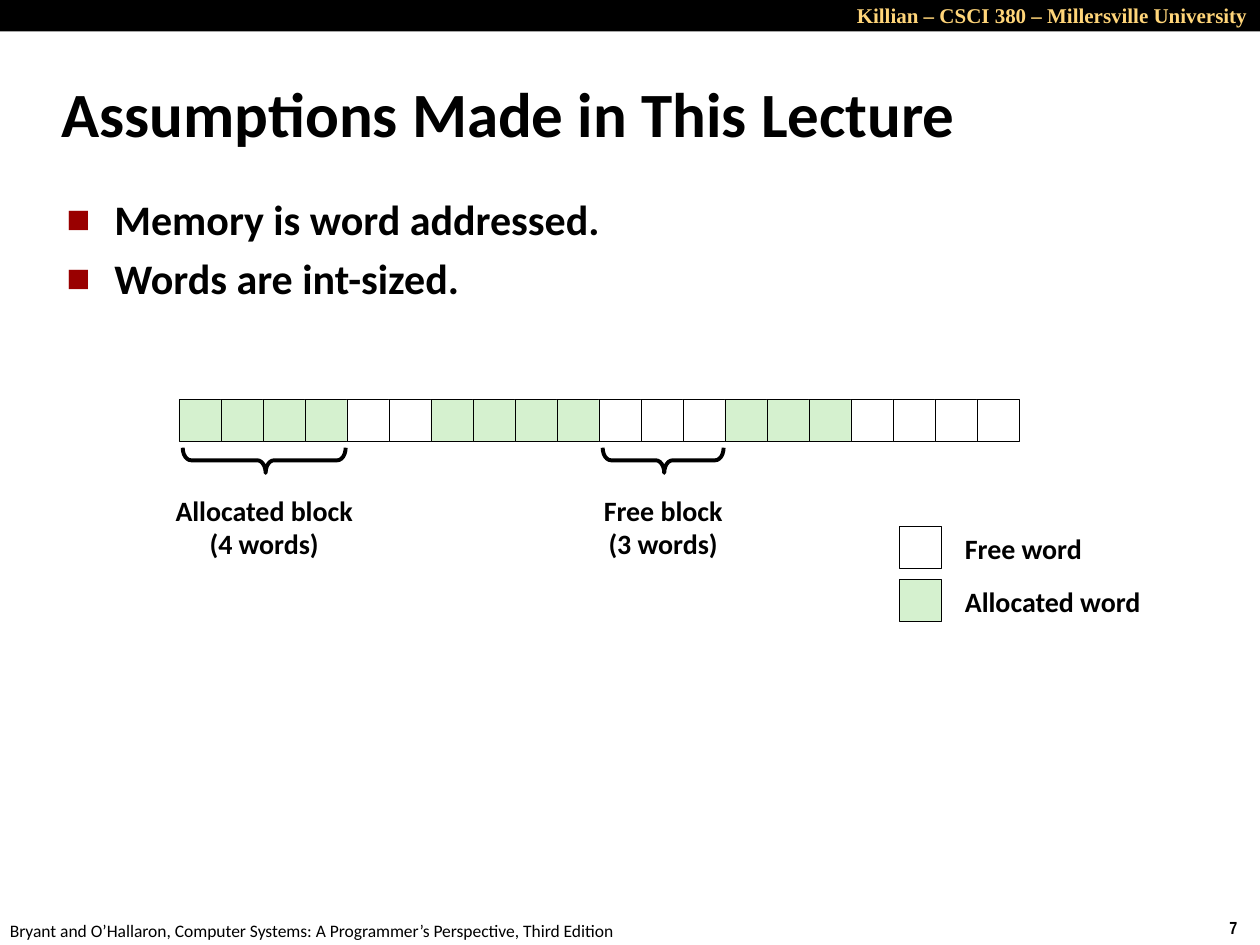
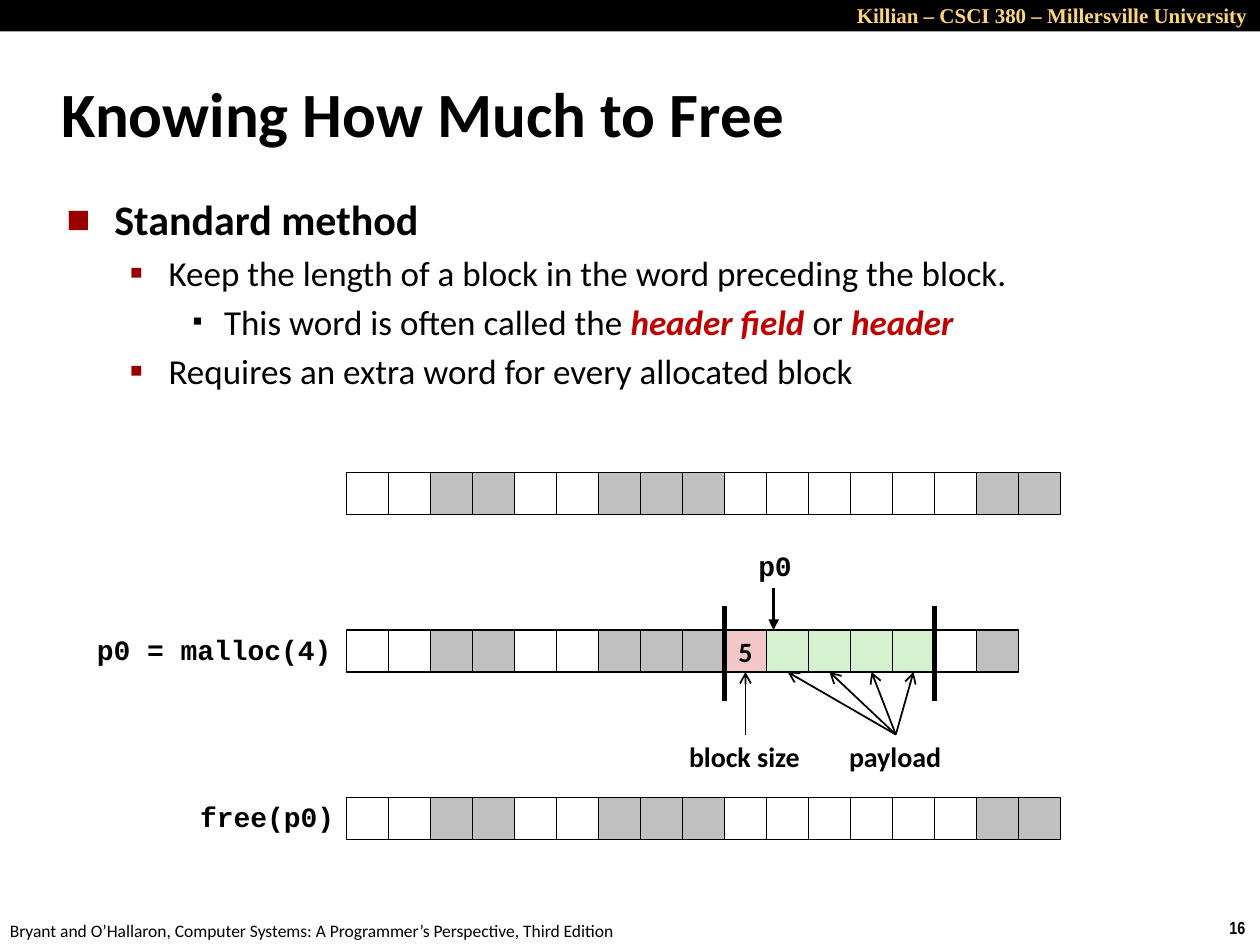
from pptx import Presentation
from pptx.dml.color import RGBColor
from pptx.enum.shapes import MSO_CONNECTOR, MSO_SHAPE
from pptx.enum.text import MSO_ANCHOR, MSO_AUTO_SIZE, PP_ALIGN
from pptx.oxml.ns import qn
from pptx.util import Inches, Pt
from lxml.etree import SubElement

BLACK = RGBColor(0x00, 0x00, 0x00)
WHITE = RGBColor(0xFF, 0xFF, 0xFF)
GOLD = RGBColor(0xFF, 0xD5, 0x79)
GREEN = RGBColor(0xD5, 0xF1, 0xCF)
GRAY = RGBColor(0xC0, 0xC0, 0xC0)
PINK = RGBColor(0xF1, 0xC7, 0xC7)
BULLET_RED = RGBColor(0x99, 0x00, 0x00)
TERM_RED = RGBColor(0xC0, 0x00, 0x00)

SANS, SERIF = "Calibri", "Times New Roman"
NARROW, CODE = "Arial Narrow", "Courier New"

WIDTH, HEIGHT = 10, 7.5
CELL = 1 / 3
WORD_FILLS = {".": WHITE, "A": GREEN, "#": GRAY, "H": PINK}

# Per level: indent, hanging, size, bold, bullet, bullet colour, bullet percent
LEVELS = [
    (0.38, 0.38, 24, True, "■", BULLET_RED, 60),
    (0.81, 0.31, 20, False, "▪", BULLET_RED, 110),
    (1.25, 0.25, 20, False, "▪", BLACK, 80),
]


def style(font, size, face=SANS, color=BLACK, bold=True, italic=False):
    font.size, font.name = Pt(size), face
    font.bold, font.italic = bold, italic
    font.color.rgb = color


def add_text(slide, text, box, size, face=SANS, color=BLACK, bold=True,
             align=PP_ALIGN.LEFT, wrap=False, spacing=None):
    frame = slide.shapes.add_textbox(*map(Inches, box)).text_frame
    frame.word_wrap = wrap
    frame.auto_size = MSO_AUTO_SIZE.NONE if wrap else MSO_AUTO_SIZE.SHAPE_TO_FIT_TEXT
    frame.text = text
    for paragraph in frame.paragraphs:
        paragraph.alignment = align
        paragraph.line_spacing = spacing
        for run in paragraph.runs:
            style(run.font, size, face, color, bold)
    return frame


def add_label(slide, text, box, face=SANS, align=PP_ALIGN.LEFT):
    spacing = 0.94 if face == CODE else 0.98
    add_text(slide, text, box, 16, face, align=align, spacing=spacing)


def set_indent(paragraph, left, hanging):
    properties = paragraph._p.get_or_add_pPr()
    properties.set("marL", str(Inches(left)))
    properties.set("indent", str(-Inches(hanging)))
    return properties


def add_frame(slide, title, number):
    """Draw the band, title and footer that every slide has."""
    band = slide.shapes.add_shape(MSO_SHAPE.RECTANGLE, 0, 0, Inches(WIDTH), Inches(HEIGHT / 30))
    band.shadow.inherit = False
    band.fill.solid()
    band.fill.fore_color.rgb = BLACK
    band.line.fill.background()
    add_text(slide, "Killian – CSCI 380 – Millersville University",
             (6.08, -0.03, 3.92, 0.3), 12, SERIF, GOLD, align=PP_ALIGN.RIGHT, wrap=True)
    add_text(slide, number, (9.66, 7.23, 0.34, 0.27), 10, NARROW)
    add_text(slide, "Bryant and O’Hallaron, Computer Systems: "
             "A Programmer’s Perspective, Third Edition",
             (-0.02, 7.25, 5.08, 0.27), 10, bold=False)
    heading = add_text(slide, title, (0.39, 0.48, 8.3, 0.83), 36, wrap=True)
    heading.vertical_anchor = MSO_ANCHOR.MIDDLE
    set_indent(heading.paragraphs[0], 0.13, 0.13)


def add_bullets(slide, items):
    """Write (level, parts) items; every second part is an emphasised term."""
    body = slide.shapes.add_textbox(*map(Inches, (0.43, 1.49, 8.64, 5.44))).text_frame
    body.word_wrap = True
    for index, (level, parts) in enumerate(items):
        paragraph = body.add_paragraph() if index else body.paragraphs[0]
        indent, hanging, size, bold, mark, mark_color, percent = LEVELS[level]
        paragraph.level = level
        paragraph.space_before = Pt(size / 5)
        properties = set_indent(paragraph, indent, hanging)
        color = SubElement(properties, qn("a:buClr"))
        SubElement(color, qn("a:srgbClr"), val=str(mark_color))
        SubElement(properties, qn("a:buSzPct"), val=str(percent * 1000))
        SubElement(properties, qn("a:buFont"), typeface=SANS)
        SubElement(properties, qn("a:buChar"), char=mark)
        for position, part in enumerate(parts):
            run = paragraph.add_run()
            run.text = part
            term = position % 2 == 1
            style(run.font, size, color=TERM_RED if term else BLACK,
                  bold=bold or term, italic=term)


def add_word(slide, left, top, kind, line_width, text=""):
    word = slide.shapes.add_shape(MSO_SHAPE.RECTANGLE, *map(Inches, (left, top, CELL, CELL)))
    word.shadow.inherit = False
    word.fill.solid()
    word.fill.fore_color.rgb = WORD_FILLS[kind]
    word.line.color.rgb = BLACK
    word.line.width = Pt(line_width)
    if text:
        frame = word.text_frame
        frame.word_wrap = False
        frame.text = text
        frame.paragraphs[0].alignment = PP_ALIGN.CENTER
        style(frame.paragraphs[0].runs[0].font, 16)


def add_memory(slide, left, top, words, line_width, header=""):
    """Draw one word per letter of words; the H word carries the header text."""
    for column, kind in enumerate(words):
        add_word(slide, left + column * CELL, top, kind, line_width,
                 header if kind == "H" else "")


def add_brace(slide, center, top, span):
    """Draw a brace below a block: a left brace turned a quarter to the left."""
    depth = 0.2
    brace = slide.shapes.add_shape(
        MSO_SHAPE.LEFT_BRACE, Inches(center - depth / 2),
        Inches(top + depth / 2 - span / 2), Inches(depth), Inches(span))
    brace.rotation = 270
    brace.adjustments[0], brace.adjustments[1] = 0.333, 0.509
    brace.shadow.inherit = False
    brace.fill.background()
    brace.line.color.rgb = BLACK
    brace.line.width = Pt(2.25)


def add_line(slide, start, end, width, head=None):
    line = slide.shapes.add_connector(MSO_CONNECTOR.STRAIGHT, *map(Inches, start + end))
    line.line.color.rgb = BLACK
    line.line.width = Pt(width)
    if head:
        SubElement(line.line._get_or_add_ln(), qn("a:tailEnd"), type=head)
    SubElement(line._element.spPr, qn("a:effectLst"))


def build_assumptions(slide):
    add_frame(slide, "Assumptions Made in This Lecture", "7")
    add_bullets(slide, [(0, ["Memory is word addressed."]), (0, ["Words are int-sized."])])

    left, top = 1.42, 3.17
    add_memory(slide, left, top, "AAAA..AAAA...AAA....", 0.25)
    for name, first, count, label_width in (("Allocated", 0, 4, 1.62), ("Free", 10, 3, 1.2)):
        center = left + (first + count / 2) * CELL + 0.01
        add_brace(slide, center, top + CELL + 0.05, count * CELL - 0.04)
        add_label(slide, f"{name} block\n({count} words)",
                  (center - label_width / 2, 3.88, label_width, 0.63), align=PP_ALIGN.CENTER)

    legend = (("Free word", ".", 1.14), ("Allocated word", "A", 1.61))
    for row, (meaning, kind, label_width) in enumerate(legend):
        legend_top = 4.18 + row * 0.42
        add_word(slide, 7.14, legend_top, kind, 0.25)
        add_label(slide, meaning, (7.56, legend_top, label_width, 0.37))


def build_freeing(slide):
    add_frame(slide, "Knowing How Much to Free", "16")
    add_bullets(slide, [
        (0, ["Standard method"]),
        (1, ["Keep the length of a block in the word preceding the block."]),
        (2, ["This word is often called the ", "header field ", "or ", "header"]),
        (1, ["Requires an extra word for every allocated block"]),
    ])

    left, malloc_top, free_top = 2.75, 5, 6.33
    before = "..##..###......##"
    after = "..##..###HAAAA.#"
    add_memory(slide, left, 3.75, before, 1)
    add_memory(slide, left, malloc_top, after, 1, header="5")
    add_memory(slide, left, free_top, before, 1)
    add_label(slide, "p0 = malloc(4)", (0.67, malloc_top - 0.01, 2.09, 0.36), CODE)
    add_label(slide, "free(p0)", (1.49, free_top - 0.01, 1.28, 0.36), CODE)
    add_label(slide, "p0", (5.92, 4.33, 0.47, 0.36), CODE)
    add_label(slide, "block size", (5.37, 5.83, 1.09, 0.37))
    add_label(slide, "payload", (6.64, 5.83, 0.94, 0.37))

    header = after.index("H")
    payload = range(header + 1, header + 5)
    for edge in (header, payload.stop):
        x = left + edge * CELL
        add_line(slide, (x, 4.81), (x, 5.56), 3)
    add_line(slide, (6.14, 4.67), (6.14, malloc_top), 2, "triangle")
    for column in (header, *payload):
        tip = left + (column + 0.5) * CELL
        origin = tip if column == header else 7.11
        add_line(slide, (origin, 5.83), (tip, malloc_top + CELL), 1, "arrow")


def main():
    deck = Presentation()
    deck.slide_width, deck.slide_height = Inches(WIDTH), Inches(HEIGHT)
    blank = deck.slide_layouts[6]
    for build in (build_assumptions, build_freeing):
        build(deck.slides.add_slide(blank))
    deck.save("out.pptx")


if __name__ == "__main__":
    main()
